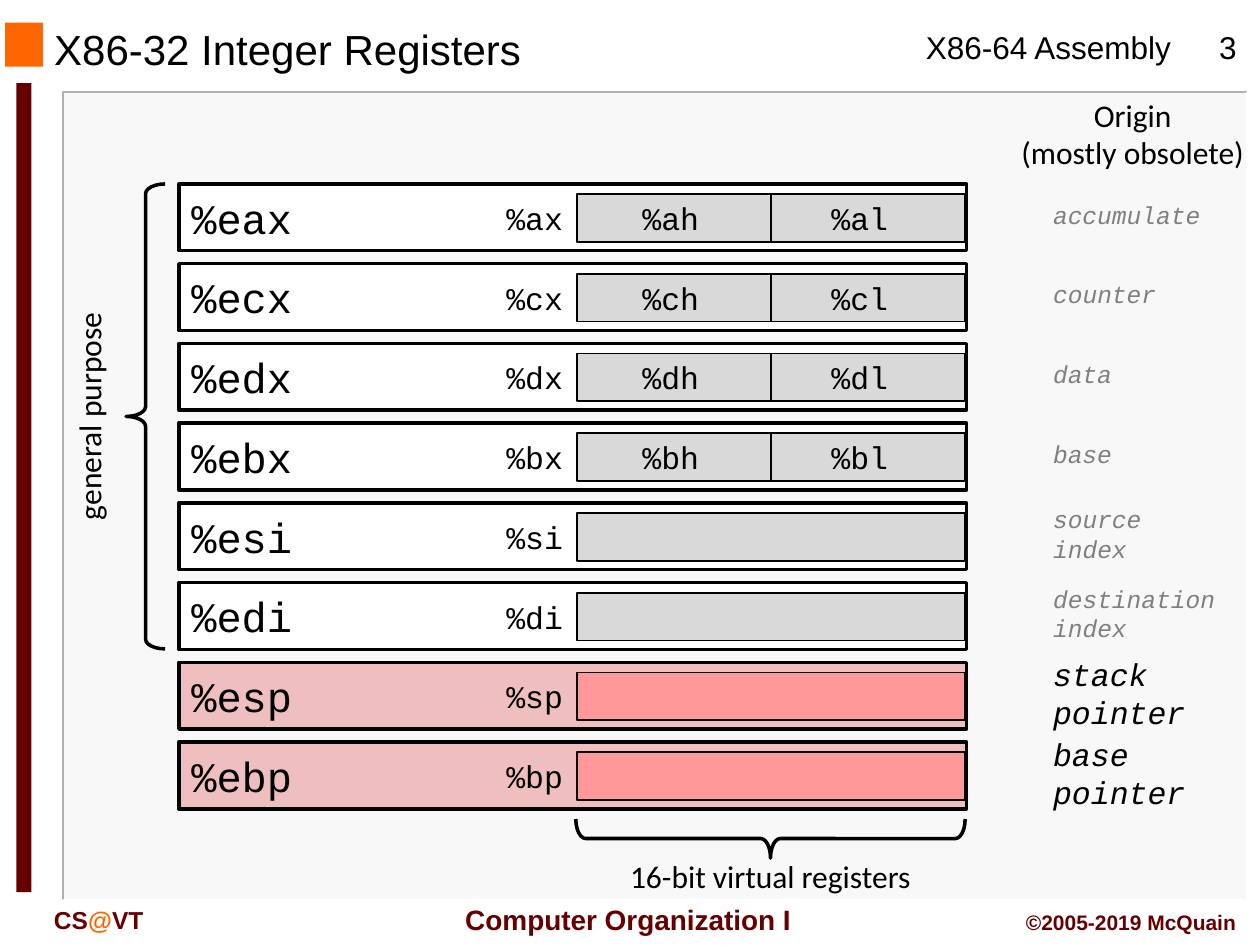
from lxml import etree
from pptx import Presentation
from pptx import util as u
from pptx.dml.color import RGBColor
from pptx.enum import shapes, text
from pptx.oxml import ns

COLORS = {
    "black": "000000", "white": "FFFFFF", "panel": "F8F8F8", "edge": "B2B2B2",
    "orange": "FF6600", "maroon": "660000", "gray": "808080",
    "plain_half": "D9D9D9", "pointer_row": "EFBFBF", "pointer_half": "FF9999",
}
MONO = "Courier New"
LEFT, CENTER, RIGHT = text.PP_ALIGN.LEFT, text.PP_ALIGN.CENTER, text.PP_ALIGN.RIGHT
MIDDLE, TOP = text.MSO_ANCHOR.MIDDLE, text.MSO_ANCHOR.TOP
REGISTERS = [
    ("ax", ["accumulate"]), ("cx", ["counter"]), ("dx", ["data"]), ("bx", ["base"]),
    ("si", ["source", "index"]), ("di", ["destination", "index"]),
    ("sp", ["stack", "pointer"]), ("bp", ["base", "pointer"]),
]


def rgb(name):
    return RGBColor.from_string(COLORS[name])


def inches(*values):
    return [u.Inches(v) for v in values]


def write(sp, lines, size, font="Arial", color="black", align=LEFT,
          anchor=TOP, wrap=False, **style):
    tf = sp.text_frame
    frame = {"word_wrap": wrap, "vertical_anchor": anchor,
             "margin_left": u.Inches(0.1), "margin_right": u.Inches(0.1),
             "margin_top": u.Inches(0.05), "margin_bottom": u.Inches(0.05)}
    for key, value in frame.items():
        setattr(tf, key, value)
    for i, line in enumerate(lines):
        p = tf.paragraphs[0] if i == 0 else tf.add_paragraph()
        p.alignment = align
        runs = [(line, color)] if isinstance(line, str) else line
        for words, run_color in runs:
            r = p.add_run()
            r.text = words
            r.font.color.rgb = rgb(run_color)
            for key, value in {"size": u.Pt(size), "name": font, **style}.items():
                setattr(r.font, key, value)


def add_text(s, box, lines, size, **style):
    sp = s.shapes.add_textbox(*inches(*box))
    write(sp, lines, size, **style)
    return sp


def paint(sp, fill=None, line=None, width=1):
    sp.shadow.inherit = False
    if fill:
        sp.fill.solid()
        sp.fill.fore_color.rgb = rgb(fill)
    else:
        sp.fill.background()
    if line:
        sp.line.color.rgb = rgb(line)
        sp.line.width = u.Pt(width)
    else:
        sp.line.fill.background()
    return sp


def add_rect(s, box, fill, line=None, width=1):
    sp = s.shapes.add_shape(shapes.MSO_SHAPE.RECTANGLE, *inches(*box))
    return paint(sp, fill, line, width)


def add_corner(s, points, line):
    start, *rest = [inches(*point) for point in points]
    fb = s.shapes.build_freeform(*start)
    fb.add_line_segments(rest, close=False)
    paint(fb.convert_to_shape(), line=line)


def add_brace(s, box, rotation):
    sp = s.shapes.add_shape(shapes.MSO_SHAPE.RIGHT_BRACE, *inches(*box))
    sp.adjustments[0], sp.adjustments[1] = 0.25, 0.5
    sp.rotation = rotation
    paint(sp, line="black", width=2)


def add_divider(s, x, top, bottom):
    ends = inches(x, top, x, bottom)
    line = s.shapes.add_connector(shapes.MSO_CONNECTOR.STRAIGHT, *ends)
    line.line.color.rgb = rgb("black")
    line.line.width = u.Pt(1)
    etree.SubElement(line._element.spPr, ns.qn("a:effectLst"))


def draw_panel(s, x, y, w, h):
    right, bottom = x + w, y + h
    add_rect(s, (x, y, w, h), "panel")
    add_corner(s, [(right, y), (x, y), (x, bottom)], "edge")
    add_corner(s, [(right, y), (right, bottom), (x, bottom)], "white")
    add_rect(s, (0.04, 0.18, 0.3, 0.35), "orange")
    add_rect(s, (0.13, 0.66, 0.12, 6.42), "maroon")


def draw_header(s, x, y, w, h):
    title = s.shapes.title
    box = dict(zip(("left", "top", "width", "height"), inches(x, y, w, h)))
    for key, value in box.items():
        setattr(title, key, value)
    write(title, ["X86-32 Integer Registers"], 24, anchor=MIDDLE, wrap=True)
    add_text(s, (7.25, 0.17, 2.17, 0.4), ["X86-64 Assembly"], 18)
    add_text(s, (9.41, 0.17, 0.67, 0.4), ["3"], 18, align=CENTER, wrap=True)


def draw_footer(s, x, y):
    style = {"color": "maroon", "bold": True}
    school = [("CS", "maroon"), ("@", "orange"), ("VT", "maroon")]
    add_text(s, (x, y + 0.02, 1.5, 0.33), [school], 14, wrap=True, **style)
    add_text(s, (3.5, y, 2.91, 0.37), [" Computer Organization I"], 16,
             align=CENTER, anchor=MIDDLE, **style)
    add_text(s, (7.83, y + 0.06, 2.08, 0.3), ["©2005-2019 McQuain"], 12,
             align=RIGHT, wrap=True, **style)


def draw_origin(s, x, middle, lines, is_pointer):
    size = 18 if is_pointer else 14
    w = max(map(len, lines)) * size / 120 + 0.25
    h = len(lines) * size / 61 + 0.1
    add_text(s, (x, middle - h / 2, w, h), lines, size, font=MONO,
             color="black" if is_pointer else "gray", italic=True)


def draw_register(s, x, y, w, h, name, origin):
    is_pointer = name in ("sp", "bp")
    has_bytes = name.endswith("x")
    half_x, half_y, half_w, half_h = x + 3.16, y + 0.08, w - 3.17, 0.38

    row = add_rect(s, (x, y, w, h), "pointer_row" if is_pointer else "white", "black", 2)
    write(row, ["%e" + name], 24, font=MONO, anchor=MIDDLE)
    add_rect(s, (half_x, half_y, half_w, half_h),
             "pointer_half" if is_pointer else "plain_half", "black")
    labels = [(x + 2.5, name)]
    if has_bytes:
        add_divider(s, half_x + half_w / 2, half_y, half_y + half_h)
        labels += [(x + 3.58, name[0] + "h"), (x + 5.08, name[0] + "l")]
    for label_x, label in labels:
        add_text(s, (label_x, y + 0.07, 0.65, 0.4), ["%" + label], 18, font=MONO)
    draw_origin(s, x + 6.84, y + 0.24, origin, is_pointer)


def draw_registers(s, x, y, w, h):
    row_h = 0.53
    pitch = (h - row_h) / (len(REGISTERS) - 1)
    for i, (name, origin) in enumerate(REGISTERS):
        draw_register(s, x, y + i * pitch, w, row_h, name, origin)


def draw_annotations(s):
    style = {"font": "Calibri"}
    add_brace(s, (1, 1.46, 0.31, 3.69), 180)
    add_brace(s, (5.96, 5.11, 0.31, 3.09), 90)
    sp = add_text(s, (-0.24, 3.08, 1.89, 0.4), ["general purpose"], 18, **style)
    sp.rotation = 270
    add_text(s, (4.89, 6.75, 2.45, 0.4), ["16-bit virtual registers"], 18,
             align=CENTER, **style)
    add_text(s, (7.98, 0.71, 2.02, 0.71), ["Origin", "(mostly obsolete)"], 18,
             align=CENTER, **style)


def main():
    prs = Presentation()
    prs.slide_width, prs.slide_height = inches(10, 7.5)
    s = prs.slides.add_slide(prs.slide_layouts[5])
    draw_panel(s, 0.5, 0.73, 9.4, 6.41)
    draw_header(s, 0.33, 0.2, 6.33, 0.38)
    draw_footer(s, 0.33, 7.11)
    draw_registers(s, 1.42, 1.46, 6.25, 4.96)
    draw_annotations(s)
    prs.save("out.pptx")


if __name__ == "__main__":
    main()
